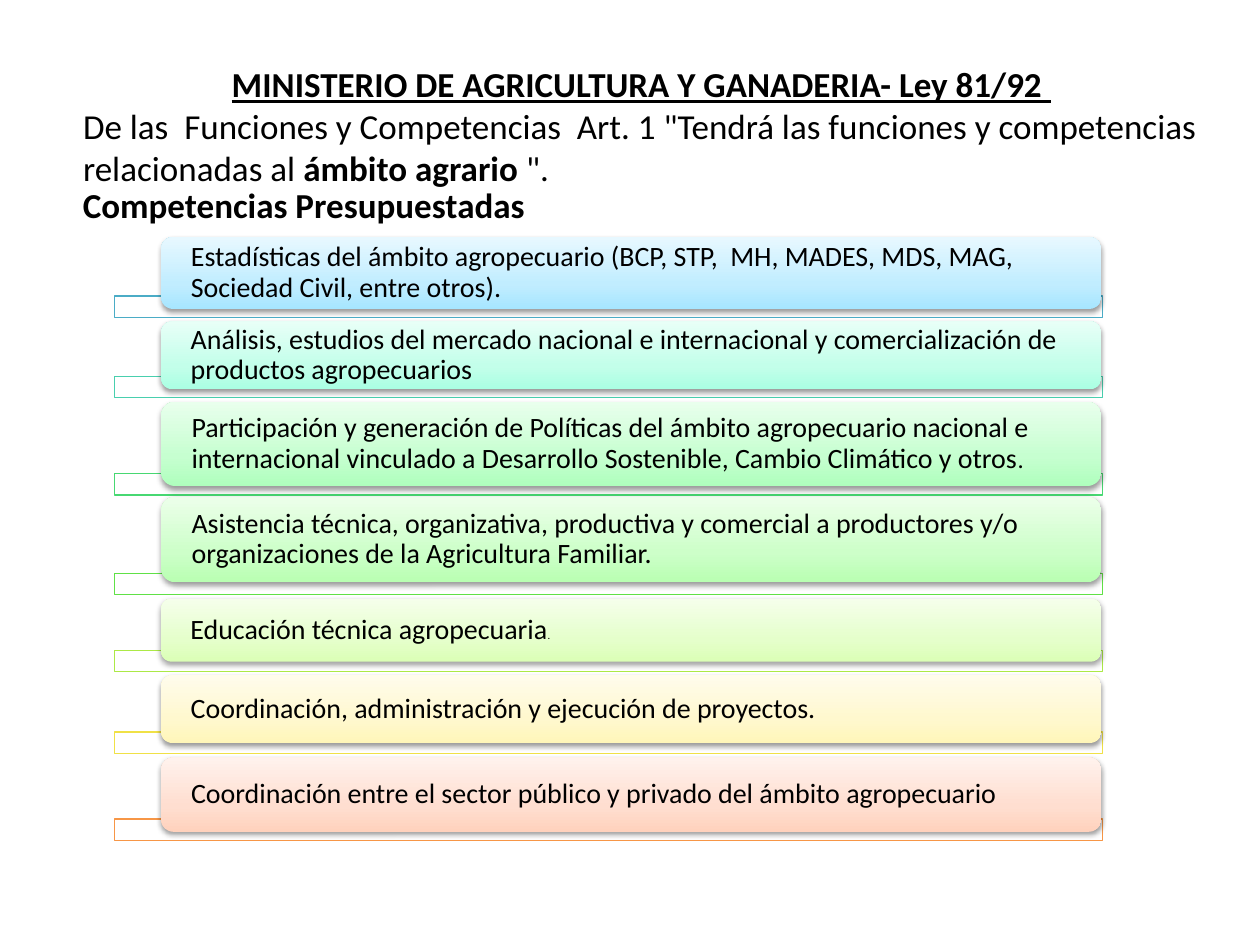
from copy import deepcopy
from lxml.etree import SubElement as Sub
from pptx import Presentation
from pptx.dml.color import RGBColor
from pptx.enum.shapes import MSO_SHAPE as Form
from pptx.enum.text import MSO_ANCHOR as Anchor, MSO_AUTO_SIZE as Fit, PP_ALIGN as Align
from pptx.oxml.ns import qn
from pptx.util import Cm, Pt


def color(code):
    return RGBColor.from_string(code)


class Deck:
    font, ink = "Calibri", "000000"
    bar_x, bar_w, bar_h = 2.31, 19.91, 0.43
    card_x, card_w = 3.25, 18.95

    def __init__(self, slide):
        self.slide = slide

    def place(self, shape, x, y, w, h):
        shape.left, shape.top, shape.width, shape.height = Cm(x), Cm(y), Cm(w), Cm(h)

    def put(self, par, runs, size, bold=None, align=Align.LEFT):
        """Each run is (text, bold, size); None keeps the paragraph's value."""
        par.alignment = align
        font = par.font
        font.name, font.size, font.bold = self.font, Pt(size), bold
        font.color.rgb = color(self.ink)
        for text, heavy, pts in runs:
            run = par.add_run()
            run.text = text
            if heavy is not None:
                run.font.bold = heavy
            if pts:
                run.font.size = Pt(pts)

    def title(self, head, runs):
        box = self.slide.shapes.title
        self.place(box, 1.42, 1.14, 23.01, 2.82)
        frame = box.text_frame
        frame.word_wrap, frame.auto_size = True, Fit.NONE
        frame.vertical_anchor = Anchor.TOP
        top = frame.paragraphs[0]
        self.put(top, [(head, None, None)], 20, True, Align.CENTER)
        top.runs[0].font.underline = True
        self.put(frame.add_paragraph(), runs, 20)

    def label(self, text, x, y, w, h):
        box = self.slide.shapes.add_textbox(Cm(x), Cm(y), Cm(w), Cm(h))
        box.text_frame.word_wrap = True
        self.put(box.text_frame.paragraphs[0], [(text, None, None)], 20, True)

    def shape(self, form, x, y, w, h):
        item = self.slide.shapes.add_shape(form, Cm(x), Cm(y), Cm(w), Cm(h))
        item.shadow.inherit = False
        return item

    def bar(self, y, line):
        bar = self.shape(Form.RECTANGLE, self.bar_x, y, self.bar_w, self.bar_h)
        bar.fill.solid()
        bar.fill.fore_color.rgb = color("FFFFFF")
        tint = bar._element.spPr.find(qn("a:solidFill"))[0]
        Sub(tint, qn("a:alpha"), val="90000")
        bar.line.color.rgb = color(line)
        bar.line.width = Pt(0.75)

    def shade(self, item, tones):
        fill = item.fill
        fill.gradient()
        fill.gradient_angle = 90
        stops = item._element.spPr.find(".//" + qn("a:gsLst"))
        stops.append(deepcopy(stops[-1]))
        for stop, tone, at in zip(fill.gradient_stops, tones, (0, 0.35, 1)):
            stop.color.rgb = color(tone)
            stop.position = at

    def drop(self, item):
        effect = item._element.spPr.find(qn("a:effectLst"))
        cast = Sub(effect, qn("a:outerShdw"), blurRad=str(Pt(3.1)), dist=str(Pt(1.6)),
                   dir="5400000", rotWithShape="0")
        tint = Sub(cast, qn("a:srgbClr"), val="000000")
        Sub(tint, qn("a:alpha"), val="38000")

    def card(self, y, h, tones, runs):
        card = self.shape(Form.ROUNDED_RECTANGLE, self.card_x, y, self.card_w, h)
        self.shade(card, tones)
        card.line.fill.background()
        self.drop(card)
        frame = card.text_frame
        frame.word_wrap, frame.vertical_anchor = True, Anchor.MIDDLE
        frame.margin_left = frame.margin_right = Cm(0.53)
        frame.margin_top = frame.margin_bottom = 0
        par = frame.paragraphs[0]
        par.line_spacing = 0.9
        self.put(par, runs, 16)


# Card top, card height, bar top, bar line, card tones, text, (end mark, its size)
ROWS = [
    (4.78, 1.45, 5.97, "4BACC6", ("A7E6FF", "C1EDFF", "E7F8FF"),
     "Estadísticas del ámbito agropecuario (BCP, STP,  MH, MADES, MDS, MAG, "
     "Sociedad Civil, entre otros).", None),
    (6.48, 1.37, 7.59, "49CFAE", ("ABFFE3", "C3FFEA", "E8FFF7"),
     "Análisis, estudios del mercado nacional e internacional y comercialización "
     "de productos agropecuarios", None),
    (8.1, 1.7, 9.55, "47D872", ("AFFFBD", "C6FFD0", "E9FFED"),
     "Participación y generación de Políticas del ámbito agropecuario nacional e "
     "internacional vinculado a Desarrollo Sostenible, Cambio Climático y otros", (".", 14)),
    (10.01, 1.73, 11.56, "60E146", ("B9FFB2", "CDFFC9", "ECFFEA"),
     "Asistencia técnica, organizativa, productiva y comercial a productores y/o "
     "organizaciones de la Agricultura Familiar.", None),
    (12.07, 1.27, 13.11, "ACE946", ("DBFFB6", "E5FFCB", "F5FFEB"),
     "Educación técnica agropecuaria", (".", 6)),
    (13.61, 1.37, 14.76, "F0E146", ("FFF6B9", "FFF8CE", "FFFCEC"),
     "Coordinación, administración y ejecución de proyectos.", None),
    (15.27, 1.5, 16.51, "F79646", ("FFD2BD", "FFDED0", "FFF2ED"),
     "Coordinación entre el sector público y privado del ámbito agropecuario", None),
]


def main():
    show = Presentation()
    show.slide_width, show.slide_height = Cm(25.4), Cm(19.05)
    deck = Deck(show.slides.add_slide(show.slide_layouts[5]))

    # Heading
    deck.title("MINISTERIO DE AGRICULTURA Y GANADERIA- Ley 81/92 ", [
        ('De las  Funciones y Competencias  Art. 1 "Tendrá las funciones y '
         'competencias relacionadas al ', None, None),
        ("ámbito agrario ", True, None),
        ('".', None, None)])
    deck.label("Competencias Presupuestadas", 1.42, 3.58, 23.01, 1.12)

    # List of duties
    for top, high, low, line, tones, text, mark in ROWS:
        deck.bar(low, line)
        runs = [(text, None, None)]
        if mark:
            runs.append((mark[0], None, mark[1]))
        deck.card(top, high, tones, runs)

    show.save("out.pptx")


if __name__ == "__main__":
    main()
